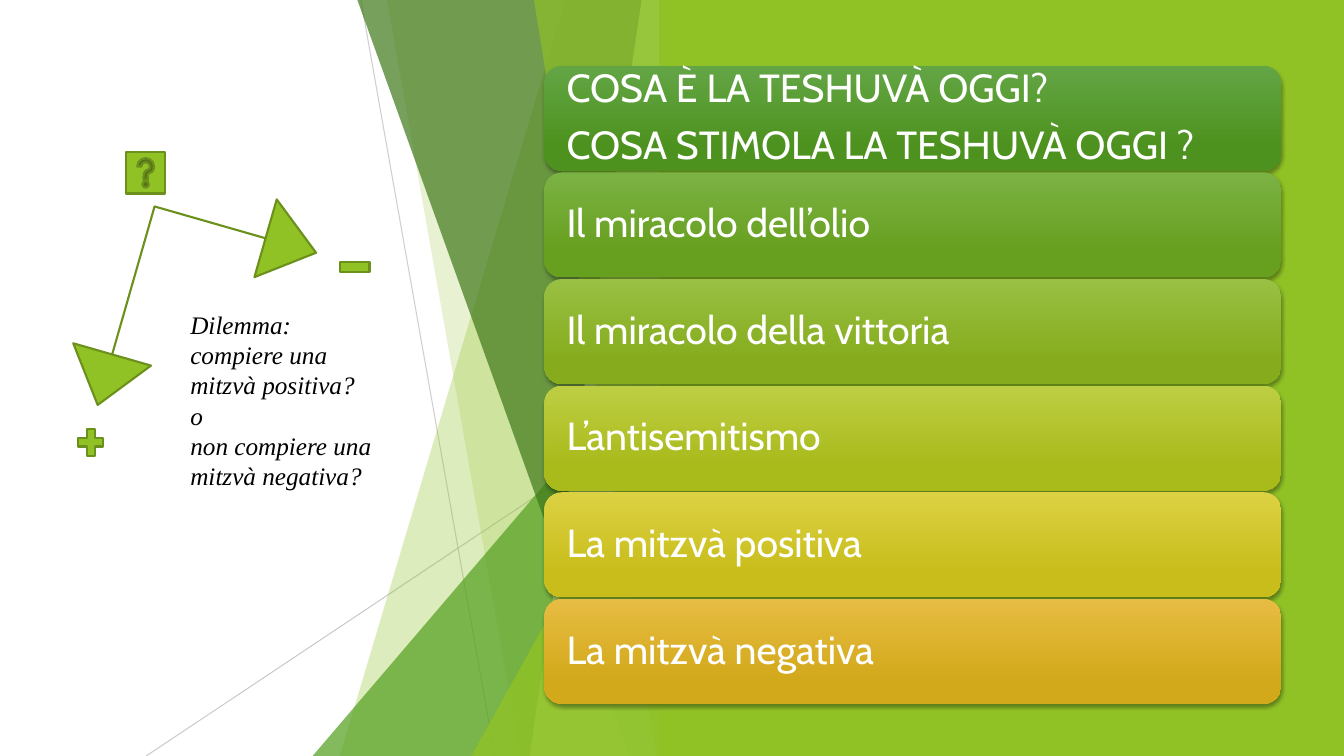
from lxml.etree import SubElement
from pptx import Presentation
from pptx.dml.color import RGBColor
from pptx.enum.shapes import MSO_CONNECTOR, MSO_SHAPE
from pptx.enum.text import MSO_ANCHOR, MSO_AUTO_SIZE, PP_ALIGN
from pptx.oxml.ns import qn
from pptx.util import Pt

PAGE_WIDTH, PAGE_HEIGHT = 960, 540
FACET_RIGHT = 479.6
PANEL_LEFT = 470.9
BOX_LEFT, BOX_TOP, BOX_WIDTH, BOX_HEIGHT, BOX_PITCH = 388.8, 47, 526.3, 75, 76.15

COLORS = {
    "lime": "90C226", "green": "54A021", "forest": "3F7819", "pale": "C0E474",
    "outline": "6B901C", "grey": "BFBFBF", "white": "FFFFFF", "black": "000000",
}
TOPIC_FORMAT = {"name": "Cabin", "size": Pt(28), "color": "white"}
DILEMMA_FORMAT = {"name": "Times New Roman", "size": Pt(18), "italic": True, "color": "black"}
TOPIC_PARAGRAPH = {"alignment": PP_ALIGN.LEFT, "line_spacing": 0.9, "space_after": Pt(9.8)}

# x at the top, x at the bottom, colour, opacity in percent
BACK_FACETS = [(404, 242.8, "lime", 30), (276.3, 371.8, "lime", 20)]
FRONT_FACETS = [(255, 449.5, "forest", 70), (458.4, 378.3, "pale", 70), (381.3, 469, "lime", 65)]

# paragraphs, gradient start, gradient end
TOPICS = [
    (["COSA È LA TESHUVÀ OGGI?", "COSA STIMOLA LA TESHUVÀ OGGI ?"], "63A545", "4D921E"),
    (["Il miracolo dell’olio"], "7BB244", "679F1E"),
    (["Il miracolo della vittoria"], "99C044", "86AC1D"),
    (["L’antisemitismo"], "BDCE43", "A9BA1B"),
    (["La mitzvà positiva"], "DCD143", "C8BD1A"),
    (["La mitzvà negativa"], "E7BC43", "D2A91B"),
]
DILEMMA = ["Dilemma: compiere una mitzvà positiva?", "o", "non compiere una mitzvà negativa?"]


def rgb(name):
    return RGBColor.from_string(COLORS[name])


def set_opacity(shape, percent):
    for color in shape._element.spPr.iter(qn("a:srgbClr")):
        SubElement(color, qn("a:alpha"), val=str(percent * 1000))


def paint(shape, color, opacity=100, outline=None):
    shape.shadow.inherit = False
    shape.fill.solid()
    shape.fill.fore_color.rgb = rgb(color)
    if opacity < 100:
        set_opacity(shape, opacity)
    if outline:
        shape.line.color.rgb = rgb(outline)
        shape.line.width = Pt(1.5)
    else:
        shape.line.fill.background()


def add_preset(page, kind, left, top, width, height):
    return page.shapes.add_shape(kind, Pt(left), Pt(top), Pt(width), Pt(height))


def add_hairline(page, start, end, opacity):
    line = page.shapes.add_connector(MSO_CONNECTOR.STRAIGHT, *map(Pt, start + end))
    line.line.color.rgb = rgb("grey")
    line.line.width = Pt(0.75)
    set_opacity(line, opacity)
    SubElement(line._element.spPr, qn("a:effectLst"))


def add_facet(page, top_x, bottom_x, color, opacity):
    """Draw a full-height band from a slanted left edge to the facets' right edge."""
    right, top, bottom = Pt(FACET_RIGHT), Pt(-0.7), Pt(PAGE_HEIGHT)
    builder = page.shapes.build_freeform(Pt(top_x), top)
    builder.add_line_segments([(right, top), (right, bottom), (Pt(bottom_x), bottom)])
    paint(builder.convert_to_shape(), color, opacity)


def add_corner(page, left, top, color, opacity):
    """Draw a right triangle standing on the bottom edge, its apex at the right."""
    corner = add_preset(page, MSO_SHAPE.ISOSCELES_TRIANGLE, left, top,
                        FACET_RIGHT - left, PAGE_HEIGHT - top)
    corner.adjustments[0] = 1
    paint(corner, color, opacity)


def write(frame, paragraphs, run_format, paragraph_format):
    for index, words in enumerate(paragraphs):
        para = frame.add_paragraph() if index else frame.paragraphs[0]
        for name, value in paragraph_format.items():
            setattr(para, name, value)
        span = para.add_run()
        span.text = words
        for name, value in run_format.items():
            if name == "color":
                span.font.color.rgb = rgb(value)
            else:
                setattr(span.font, name, value)


def add_drop_shadow(shape):
    shape.shadow.inherit = False
    effects = shape._element.spPr.find(qn("a:effectLst"))
    shadow = SubElement(effects, qn("a:outerShdw"), blurRad=str(Pt(3)), dist=str(Pt(2)),
                        dir="5400000", rotWithShape="0")
    color = SubElement(shadow, qn("a:srgbClr"), val=COLORS["black"])
    SubElement(color, qn("a:alpha"), val="35000")


def add_topic(page, row, paragraphs, start, end):
    box = add_preset(page, MSO_SHAPE.ROUNDED_RECTANGLE, BOX_LEFT, BOX_TOP + row * BOX_PITCH,
                     BOX_WIDTH, BOX_HEIGHT)
    box.fill.gradient()
    box.fill.gradient_angle = 270
    for stop, color, position in zip(box.fill.gradient_stops, (start, end), (0, 0.78)):
        stop.color.rgb = RGBColor.from_string(color)
        stop.position = position
    box.line.fill.background()
    add_drop_shadow(box)
    frame = box.text_frame
    layout = {"word_wrap": True, "vertical_anchor": MSO_ANCHOR.MIDDLE, "margin_left": Pt(12.25),
              "margin_right": Pt(12.25), "margin_top": 0, "margin_bottom": 0}
    for name, value in layout.items():
        setattr(frame, name, value)
    write(frame, paragraphs, TOPIC_FORMAT, TOPIC_PARAGRAPH)


def add_fork(page):
    """Draw the two-headed arrow that leads to the plus and the minus."""
    fork = add_preset(page, MSO_SHAPE.LEFT_UP_ARROW, 63.4, 128.9, 149, 176.4)
    for index, value in enumerate((0, 0.194, 0.252)):
        fork.adjustments[index] = value
    fork.rotation = 16
    for flip in ("flipH", "flipV"):
        fork._element.spPr.xfrm.set(flip, "1")
    paint(fork, "lime", outline="outline")


def add_dilemma(page):
    box = page.shapes.add_textbox(Pt(128.9), Pt(217.4), Pt(149), Pt(116.6))
    box.text_frame.word_wrap = True
    box.text_frame.auto_size = MSO_AUTO_SIZE.SHAPE_TO_FIT_TEXT
    write(box.text_frame, DILEMMA, DILEMMA_FORMAT, {})


def add_symbol(page, kind, left, top, width, height):
    paint(add_preset(page, kind, left, top, width, height), "lime", outline="outline")


def main():
    deck = Presentation()
    deck.slide_width, deck.slide_height = Pt(PAGE_WIDTH), Pt(PAGE_HEIGHT)
    page = deck.slides.add_slide(deck.slide_layouts[6])

    add_hairline(page, (257.8, 0), (353.5, PAGE_HEIGHT), 75)
    add_hairline(page, (FACET_RIGHT, 290), (104.4, PAGE_HEIGHT), 80)
    for facet in BACK_FACETS:
        add_facet(page, *facet)
    add_corner(page, 223.3, 240, "green", 72)
    for facet in FRONT_FACETS:
        add_facet(page, *facet)
    add_corner(page, 336.7, 283, "lime", 80)
    panel = add_preset(page, MSO_SHAPE.RECTANGLE, PANEL_LEFT, 0,
                       PAGE_WIDTH - PANEL_LEFT, PAGE_HEIGHT)
    paint(panel, "lime")

    for row, topic in enumerate(TOPICS):
        add_topic(page, row, *topic)

    add_fork(page)
    add_dilemma(page)
    add_symbol(page, MSO_SHAPE.MATH_PLUS, 52.6, 303.1, 24.5, 25.9)
    add_symbol(page, MSO_SHAPE.MATH_MINUS, 239, 175.7, 28.8, 30.2)
    add_symbol(page, MSO_SHAPE.ACTION_BUTTON_HELP, 90, 108.7, 28.1, 29.5)

    deck.save("out.pptx")


if __name__ == "__main__":
    main()
